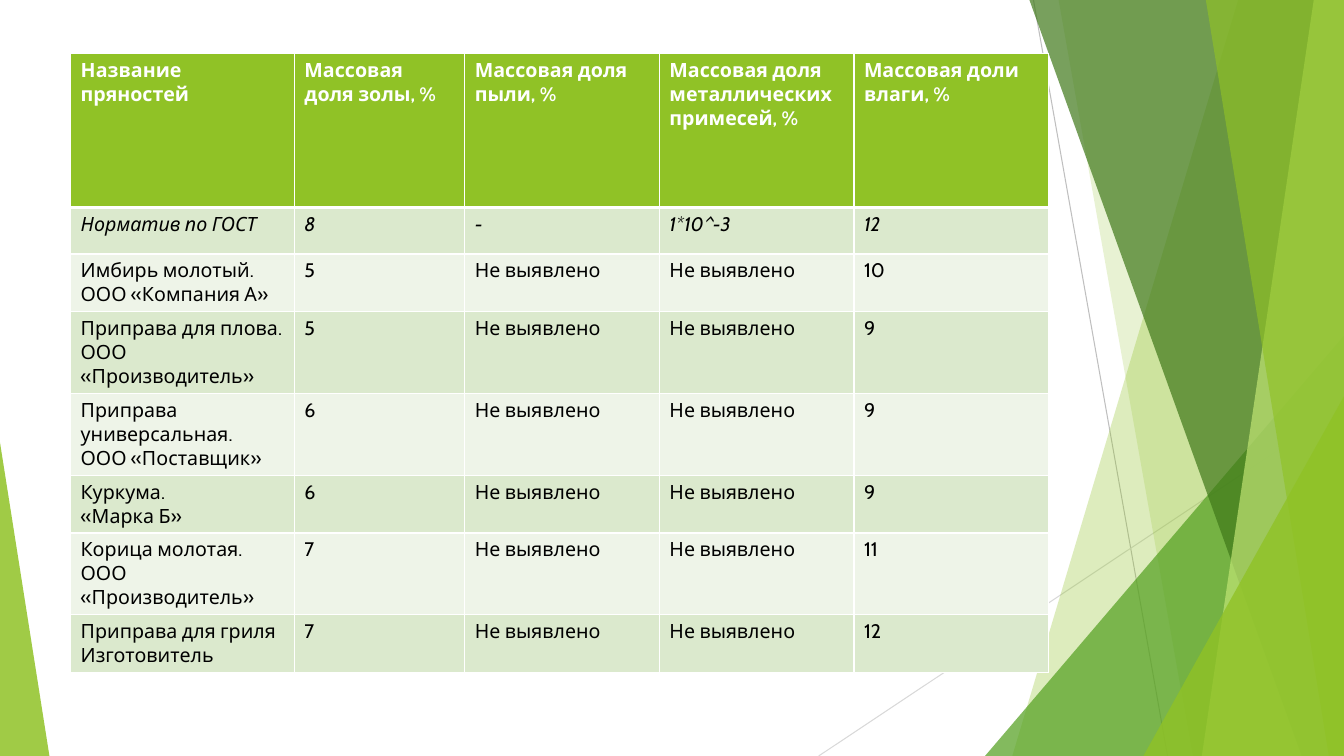
from lxml import etree
from pptx import Presentation
from pptx.dml.color import RGBColor
from pptx.enum.shapes import MSO_CONNECTOR, MSO_SHAPE
from pptx.oxml.ns import qn
from pptx.util import Inches, Pt

STRAIGHT = MSO_CONNECTOR.STRAIGHT
TRIANGLE = MSO_SHAPE.ISOSCELES_TRIANGLE

FONT = "Cabin"
WHITE, BLACK, GREEN = "FFFFFF", "000000", "90C226"
BANDS = ["DBE9CD", "EEF4E8"]
WIDTH, HEIGHT = 13.33, 7.5
ABSENT = "Не выявлено"

HEADER = ["Название пряностей", "Массовая доля золы, %", "Массовая доля пыли, %",
          "Массовая доля металлических примесей, %", "Массовая доли влаги, %"]
STANDARD = ["Норматив по ГОСТ", "8", "-", "1*10^-3", "12"]
# Spice, producer, ash, moisture
SPICES = [
    ("Имбирь молотый.", "ООО «Компания А»", "5", "10"),
    ("Приправа для плова.", "ООО «Производитель»", "5", "9"),
    ("Приправа универсальная.", "ООО «Поставщик»", "6", "9"),
    ("Куркума.", "«Марка Б»", "6", "9"),
    ("Корица молотая.", "ООО «Производитель»", "7", "11"),
    ("Приправа для гриля", "Изготовитель", "7", "12"),
]
COLUMN_WIDTHS = [2.22, 1.69, 1.93, 1.93, 1.93]
ROW_HEIGHTS = [1.53] + [0.46] * (1 + len(SPICES))

# Start, end, colour
RAYS = [((10.25, 0), (11.58, HEIGHT), "BFBFBF"),
        ((WIDTH, 4.03), (8.12, HEIGHT), "D9D9D9")]
# Facets reach the right edge. Bands: top left x, bottom left x, colour, opacity.
# Corners: left, top, width, apex position, colour, opacity.
FACETS = [
    ("band", 12.28, 10.04, GREEN, 30),
    ("band", 10.5, 11.83, GREEN, 20),
    ("corner", 9.77, 3.33, 3.56, 1, "54A021", 72),
    ("band", 10.21, 12.91, "3F7819", 70),
    ("band", 13.03, 11.92, "C0E474", 70),
    ("band", 11.96, 13.18, GREEN, 65),
    ("corner", 11.34, 3.93, 1.99, 1, GREEN, 80),
    ("corner", 0, 4.39, 0.49, 0, GREEN, 85),
]


def rgb(value):
    return RGBColor.from_string(value)


def add_ray(shapes, start, end, color):
    ray = shapes.add_connector(STRAIGHT, *map(Inches, start + end))
    ray.line.color.rgb = rgb(color)
    ray.line.width = Pt(0.75)
    etree.SubElement(ray._element.spPr, qn("a:effectLst"))


def paint(shape, color, opacity):
    shape.shadow.inherit = False
    shape.line.fill.background()
    shape.fill.solid()
    shape.fill.fore_color.rgb = rgb(color)
    color_node = shape._element.spPr.find(qn("a:solidFill"))[0]
    etree.SubElement(color_node, qn("a:alpha"), val=str(opacity * 1000))


def add_band(shapes, top_x, bottom_x, color, opacity):
    builder = shapes.build_freeform(Inches(top_x), 0)
    corners = [(WIDTH, 0), (WIDTH, HEIGHT), (bottom_x, HEIGHT)]
    builder.add_line_segments([(Inches(x), Inches(y)) for x, y in corners])
    paint(builder.convert_to_shape(), color, opacity)


def add_corner(shapes, left, top, width, apex, color, opacity):
    corner = shapes.add_shape(TRIANGLE, Inches(left), Inches(top),
                              Inches(width), Inches(HEIGHT - top))
    corner.adjustments[0] = apex
    paint(corner, color, opacity)


def set_borders(cell, top, bottom):
    """Draw white borders, with top and bottom widths in points."""
    properties = cell._tc.get_or_add_tcPr()
    widths = {"lnL": 1, "lnR": 1, "lnT": top, "lnB": bottom}
    for position, (side, width) in enumerate(widths.items()):
        border = etree.Element(qn("a:" + side), w=str(Pt(width)))
        fill = etree.SubElement(border, qn("a:solidFill"))
        etree.SubElement(fill, qn("a:srgbClr"), val=WHITE)
        properties.insert(position, border)


def fill_cell(cell, lines, row):
    is_header = row == 0
    cell.fill.solid()
    cell.fill.fore_color.rgb = rgb(GREEN if is_header else BANDS[(row - 1) % 2])
    set_borders(cell, 3 if row == 1 else 1, 3 if is_header else 1)
    frame = cell.text_frame
    for index, line in enumerate(lines):
        paragraph = frame.add_paragraph() if index else frame.paragraphs[0]
        run = paragraph.add_run()
        run.text = line
        run.font.name = FONT
        run.font.size = Pt(14)
        run.font.bold = is_header
        run.font.italic = row == 1
        run.font.color.rgb = rgb(WHITE if is_header else BLACK)


def add_spice_table(shapes):
    rows = [[[text] for text in row] for row in (HEADER, STANDARD)]
    rows += [[[spice, producer], [ash], [ABSENT], [ABSENT], [moisture]]
             for spice, producer, ash, moisture in SPICES]
    table = shapes.add_table(len(rows), len(HEADER), Inches(0.7), Inches(0.53),
                             Inches(sum(COLUMN_WIDTHS)), Inches(sum(ROW_HEIGHTS))).table
    for column, width in zip(table.columns, COLUMN_WIDTHS):
        column.width = Inches(width)
    for row, height in zip(table.rows, ROW_HEIGHTS):
        row.height = Inches(height)
    for r, row in enumerate(rows):
        for c, lines in enumerate(row):
            fill_cell(table.cell(r, c), lines, r)


def main():
    deck = Presentation()
    deck.slide_width, deck.slide_height = Inches(WIDTH), Inches(HEIGHT)
    blank_layout = deck.slide_layouts[6]
    shapes = deck.slides.add_slide(blank_layout).shapes
    for ray in RAYS:
        add_ray(shapes, *ray)
    add_facet = {"band": add_band, "corner": add_corner}
    for kind, *facet in FACETS:
        add_facet[kind](shapes, *facet)
    add_spice_table(shapes)
    deck.save("out.pptx")


if __name__ == "__main__":
    main()
